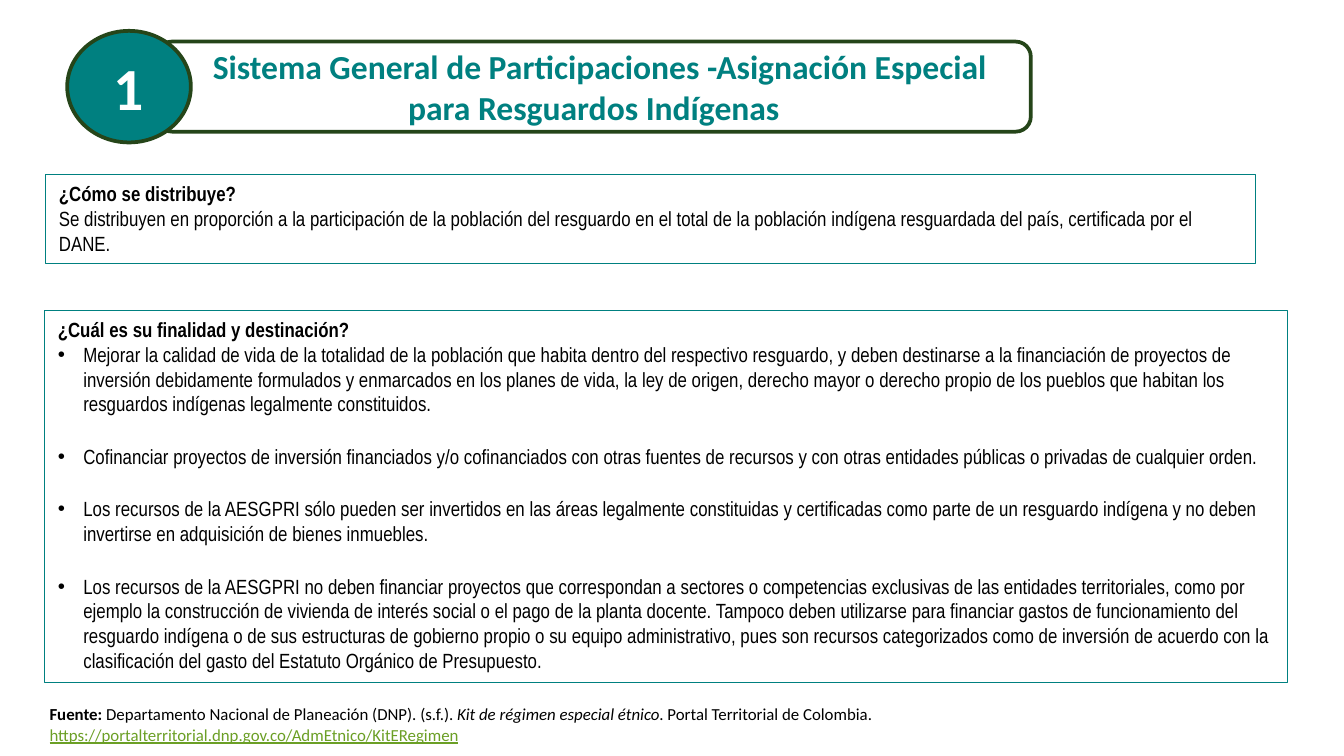
from lxml.etree import SubElement
from pptx import Presentation
from pptx.dml.color import RGBColor
from pptx.enum.shapes import MSO_SHAPE as Shape
from pptx.enum.text import MSO_ANCHOR as Anchor, MSO_AUTO_SIZE as AutoSize, PP_ALIGN as Align
from pptx.oxml.ns import qn
from pptx.util import Inches, Pt

TEAL = RGBColor(0x00, 0x80, 0x80)
DARK_GREEN = RGBColor(0x25, 0x45, 0x19)
LINK_GREEN = RGBColor(0x6B, 0x9F, 0x25)
WHITE = RGBColor(0xFF, 0xFF, 0xFF)
BLACK = RGBColor(0x00, 0x00, 0x00)

deck = Presentation()
deck.slide_width = Inches(10)
deck.slide_height = deck.slide_width * 9 // 16
page = deck.slides.add_slide(deck.slide_layouts[1])
column, row = deck.slide_width / 100, deck.slide_height / 100


def area(left, top, width, height):
    """Turn hundredths of the slide's width and height into lengths."""
    return int(left * column), int(top * row), int(width * column), int(height * row)


def set_font(font, name, size, color, bold=False):
    font.name, font.size, font.bold = name, Pt(size), bold
    font.color.rgb = color


# Heading in a rounded frame, with a numbered badge
heading_area = area(11.7, 5.51, 65, 11.91)
heading_frame = page.shapes.add_shape(Shape.ROUNDED_RECTANGLE, *heading_area)
page.shapes._spTree.insert(2, heading_frame._element)  # behind the title
title = page.shapes.title
title.left, title.top, title.width, title.height = heading_area
title.text = "Sistema General de Participaciones -Asignación Especial para Resguardos Indígenas"
title.text_frame.paragraphs[0]._p.get_or_add_pPr().set("indent", str(Inches(0.09)))

badge = page.shapes.add_shape(Shape.OVAL, *area(5, 4.09, 9.2, 14.76))
badge.text_frame.text = "1"

for shape, fill in ((heading_frame, WHITE), (badge, TEAL)):
    shape.shadow.inherit = False
    shape.fill.solid()
    shape.fill.fore_color.rgb = fill
    shape.line.color.rgb = DARK_GREEN
    shape.line.width = Pt(2)

for shape, color, size in ((title, TEAL, 18), (badge, WHITE, 32)):
    frame = shape.text_frame
    frame.auto_size = AutoSize.NONE
    frame.vertical_anchor = Anchor.MIDDLE
    para = frame.paragraphs[0]
    para.alignment = Align.CENTER
    set_font(para.font, "Calibri", size, color, True)

# Framed question boxes
distribution = page.shapes.add_shape(Shape.RECTANGLE, *area(3.4, 23.11, 90, 11.73))
distribution.shadow.inherit = False
purpose = page.placeholders[1]
purpose.left, purpose.top, purpose.width, purpose.height = area(3.3, 41.07, 92.5, 49.24)

questions = (
    (distribution, False, "¿Cómo se distribuye?", (
        "Se distribuyen en proporción a la participación de la población del resguardo en el total de la población indígena resguardada del país, certificada por el DANE.",
    )),
    (purpose, True, "¿Cuál es su finalidad y destinación?", (
        "Mejorar la calidad de vida de la totalidad de la población que habita dentro del respectivo resguardo, y deben destinarse a la financiación de proyectos de inversión debidamente formulados y enmarcados en los planes de vida, la ley de origen, derecho mayor o derecho propio de los pueblos que habitan los resguardos indígenas legalmente constituidos.",
        "Cofinanciar proyectos de inversión financiados y/o cofinanciados con otras fuentes de recursos y con otras entidades públicas o privadas de cualquier orden.",
        "Los recursos de la AESGPRI sólo pueden ser invertidos en las áreas legalmente constituidas y certificadas como parte de un resguardo indígena y no deben invertirse en adquisición de bienes inmuebles.",
        "Los recursos de la AESGPRI no deben financiar proyectos que correspondan a sectores o competencias exclusivas de las entidades territoriales, como por ejemplo la construcción de vivienda de interés social o el pago de la planta docente. Tampoco deben utilizarse para financiar gastos de funcionamiento del resguardo indígena o de sus estructuras de gobierno propio o su equipo administrativo, pues son recursos categorizados como de inversión de acuerdo con la clasificación del gasto del Estatuto Orgánico de Presupuesto.",
    )),
)
for box, bulleted, question, answers in questions:
    box.fill.background()
    box.line.color.rgb = TEAL
    box.line.width = Pt(0.75)
    frame = box.text_frame
    frame.word_wrap = True
    frame.auto_size = AutoSize.NONE
    frame.vertical_anchor = Anchor.TOP
    frame.text = "\n".join((question, *answers))
    for index, para in enumerate(frame.paragraphs):
        is_answer = index > 0
        has_bullet = bulleted and is_answer
        indent = Inches(0.19) if has_bullet else 0
        properties = para._p.get_or_add_pPr()
        properties.set("marL", str(indent))
        properties.set("indent", str(-indent))
        if has_bullet:
            SubElement(properties, qn("a:buFont"), typeface="Arial")
            SubElement(properties, qn("a:buChar"), char="•")
        else:
            SubElement(properties, qn("a:buNone"))
        para.alignment = Align.LEFT
        para.space_before = Pt(0)
        para.space_after = Pt(15 if is_answer else 0)
        set_font(para.font, "Arial Narrow", 11, BLACK, not is_answer)

# Source line
source = page.shapes.add_textbox(*area(2.7, 92.27, 92.5, 7.11))
source.text_frame.word_wrap = True
para = source.text_frame.paragraphs[0]
for text, bold, italic in (
    ("Fuente: ", True, False),
    ("Departamento Nacional de Planeación (DNP). (s.f.). ", False, False),
    ("Kit de régimen especial étnico", False, True),
    (". Portal Territorial de Colombia.", False, False),
):
    span = para.add_run()
    span.text = text
    set_font(span.font, "Calibri", 9, BLACK, bold)
    span.font.italic = italic
para.add_line_break()
address = para.add_run()
address.text = "https://portalterritorial.dnp.gov.co/AdmEtnico/KitERegimen"
set_font(address.font, "Calibri", 9, LINK_GREEN)
address.font.underline = True

deck.save("out.pptx")
